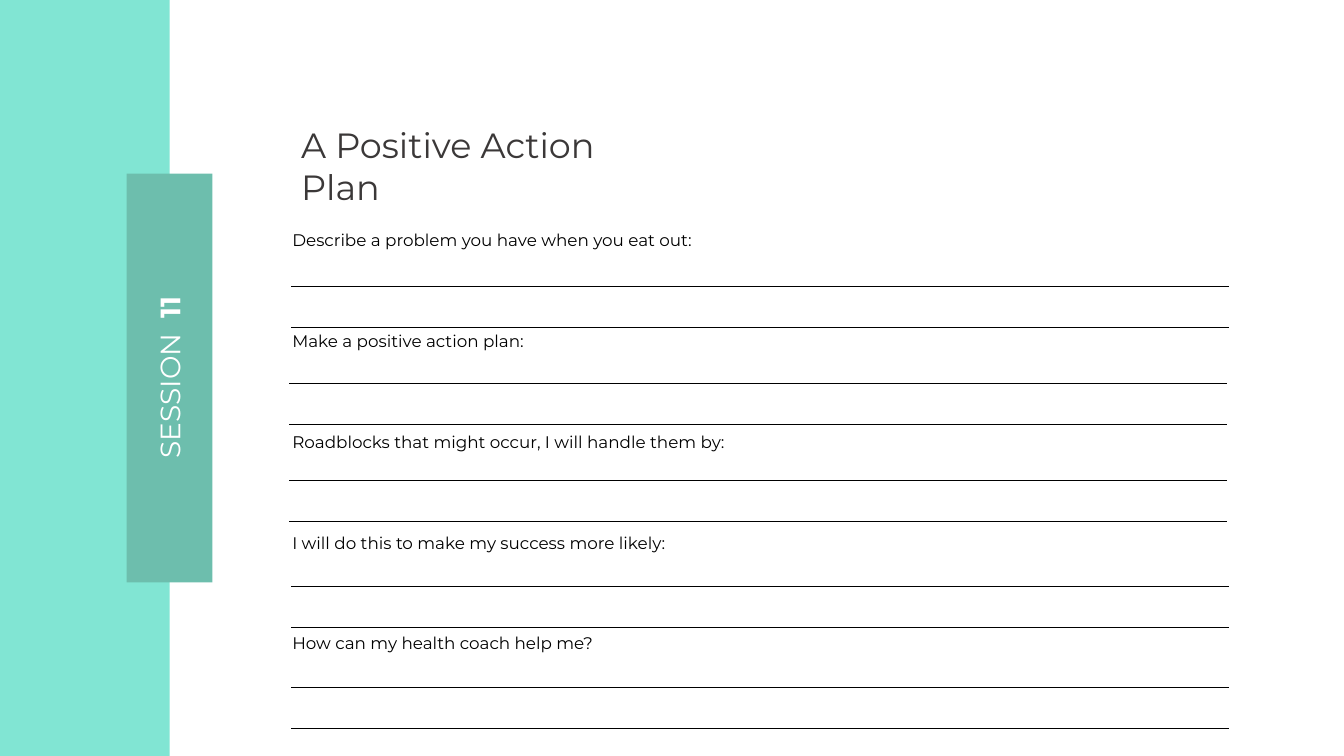
"""Build the Session 11 action plan worksheet slide."""
import pptx
import pptx.dml.color
import pptx.enum.shapes
import pptx.enum.text
import pptx.oxml
import pptx.oxml.ns
import pptx.util

Pt = pptx.util.Pt
COLORS = {"mint": "81E5D3", "teal": "6DBEAD", "white": "FFFFFF",
          "title": "3B3838", "black": "000000"}
PROMPTS = [
    "Describe a problem you have when you eat out:",
    "Make a positive action plan:",
    "Roadblocks that might occur, I will handle them by:",
    "I will do this to make my success more likely:",
    "How can my health coach help me?",
]
ANSWER_LINES = [(208, 204.5), (206.8, 273.8), (206.8, 343.1),
                (208, 419), (208, 491)]
ROW_HEIGHT = 29.3


def rgb(name):
    return pptx.dml.color.RGBColor.from_string(COLORS[name])


def add_run(p, text, size, color, bold=False):
    r = p.add_run()
    r.text = text
    r.font.name = "Montserrat"
    r.font.size = Pt(size)
    r.font.bold = bold
    r.font.color.rgb = rgb(color)
    return r


prs = pptx.Presentation()
prs.slide_width, prs.slide_height = Pt(960), Pt(540)
s = prs.slides.add_slide(prs.slide_layouts[6])

for left, top, width, height, color in [(0, 0, 121.2, 540, "mint"),
                                        (90.4, 124, 61.4, 292, "teal")]:
    sp = s.shapes.add_shape(pptx.enum.shapes.MSO_SHAPE.RECTANGLE,
                            Pt(left), Pt(top), Pt(width), Pt(height))
    sp.shadow.inherit = False
    sp.fill.solid()
    sp.fill.fore_color.rgb = rgb(color)
    sp.line.fill.background()

session = s.shapes.add_textbox(Pt(55.6), Pt(254.2), Pt(131), Pt(31.5))
session.rotation = 270
tf = session.text_frame
tf.word_wrap = False
p = tf.paragraphs[0]
p.alignment = pptx.enum.text.PP_ALIGN.CENTER
add_run(p, "SESSION", 20, "white")
gap = add_run(p, " ", 20, "white")
gap.font._element.set("spc", "520")
add_run(p, "11", 20, "white", bold=True)

prompts = s.shapes.add_textbox(Pt(208), Pt(164.2), Pt(670), Pt(304))
tf = prompts.text_frame
tf.word_wrap = True
tf.margin_left = tf.margin_right = tf.margin_top = tf.margin_bottom = 0
for i, prompt in enumerate(PROMPTS):
    p = tf.add_paragraph() if i else tf.paragraphs[0]
    if i:
        p.space_before = Pt(57.6)
    p._p.get_or_add_pPr().set("marL", str(Pt(0.8)))
    add_run(p, prompt, 12, "black")

title = s.shapes.add_textbox(Pt(208), Pt(85), Pt(278), Pt(37.4))
tf = title.text_frame
tf.word_wrap = True
add_run(tf.paragraphs[0], "A Positive Action Plan", 25, "title")

for left, top in ANSWER_LINES:
    table = s.shapes.add_table(1, 1, Pt(left), Pt(top), Pt(670), Pt(ROW_HEIGHT)).table
    cell = table.cell(0, 0)
    tcPr = cell._tc.get_or_add_tcPr()
    for side in "LRTB":
        fill = ("<a:noFill/>" if side in "LR" else
                f'<a:solidFill><a:srgbClr val="{COLORS["black"]}"/></a:solidFill>')
        tcPr.append(pptx.oxml.parse_xml(
            f'<a:ln{side} {pptx.oxml.ns.nsdecls("a")} w="{Pt(1)}">{fill}</a:ln{side}>'))
    cell.fill.background()

prs.save("out.pptx")
